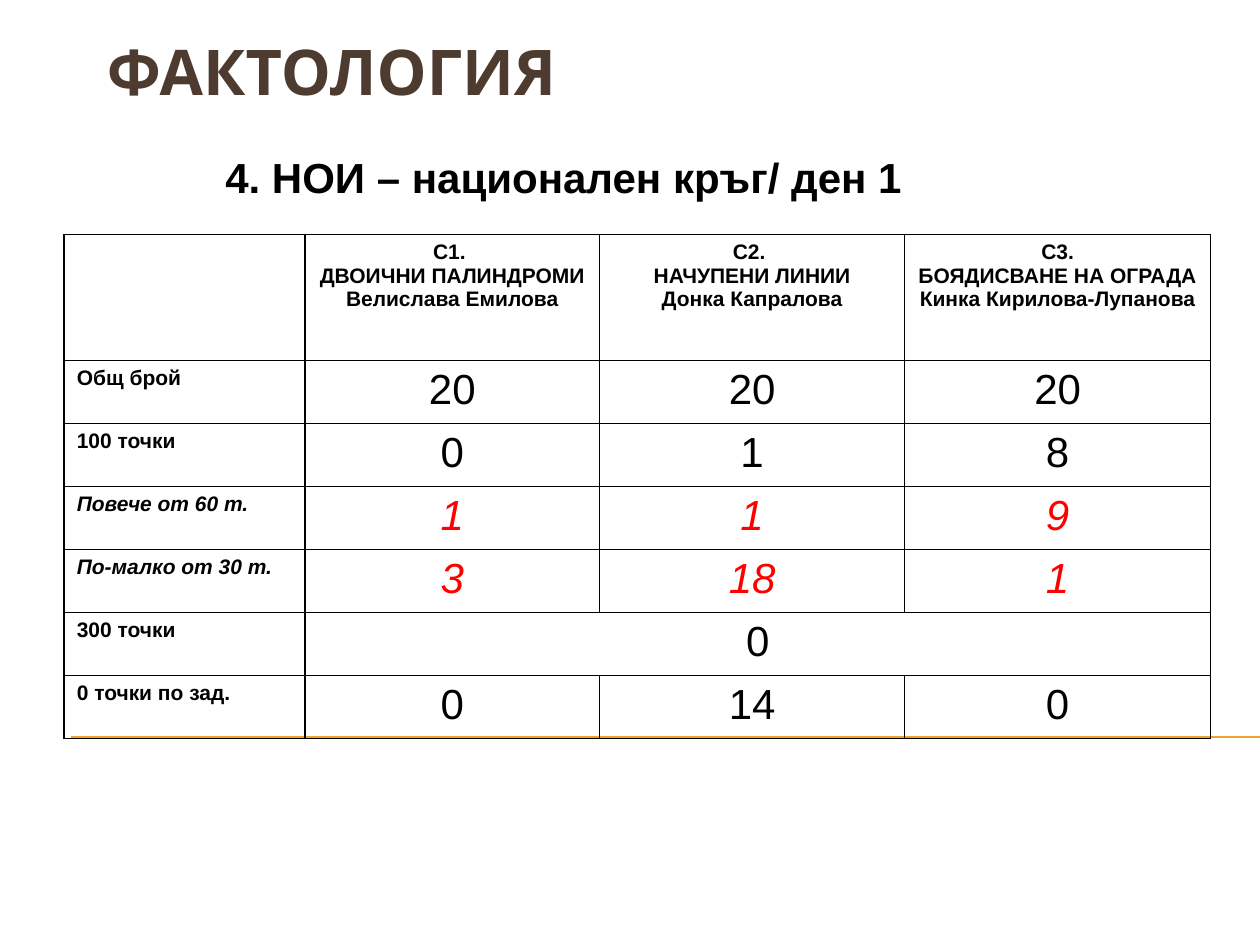
"""Builds the slide with the results of the first day of the national round."""
from lxml import etree
from pptx import Presentation
from pptx.dml.color import RGBColor
from pptx.enum.shapes import MSO_CONNECTOR
from pptx.enum.text import MSO_ANCHOR, MSO_AUTO_SIZE, PP_ALIGN
from pptx.oxml import parse_xml
from pptx.oxml.ns import nsdecls, qn
from pptx.util import Inches, Pt

STRAIGHT = MSO_CONNECTOR.STRAIGHT
TOP, MIDDLE = MSO_ANCHOR.TOP, MSO_ANCHOR.MIDDLE
FIT_SHAPE = MSO_AUTO_SIZE.SHAPE_TO_FIT_TEXT
LEFT, CENTER = PP_ALIGN.LEFT, PP_ALIGN.CENTER

COLORS = {
    "title": "4E3B30",
    "text": "000000",
    "highlight": "FF0000",
    "rule": "F0A22E",
    "border": "000000",
}
COLUMN_WIDTHS = [1.91, 2.34, 2.42, 2.43]
HEADER_HEIGHT = 1
ROW_HEIGHT = 0.5
HEADERS = [
    ["С1. ", "ДВОИЧНИ ПАЛИНДРОМИ", "Велислава Емилова"],
    ["С2. ", "НАЧУПЕНИ ЛИНИИ", "Донка Капралова"],
    ["С3.", "БОЯДИСВАНЕ НА ОГРАДА", "Кинка Кирилова-Лупанова"],
]
RESULTS = [
    ("Общ брой", ["20", "20", "20"], False),
    ("100 точки", ["0", "1", "8"], False),
    ("Повече от 60 т.", ["1", "1", "9"], True),
    ("По-малко от 30 т.", ["3", "18", "1"], True),
    ("300 точки", ["0"], False),
    ("0 точки по зад.", ["0", "14", "0"], False),
]


def write_text(frame, lines, size=12, font="Arial", color="text",
               bold=False, italic=False, align=LEFT):
    """Write each line as one formatted paragraph of the text frame."""
    for index, line in enumerate(lines):
        para = frame.paragraphs[0] if index == 0 else frame.add_paragraph()
        para.alignment = align
        span = para.add_run()
        span.text = line
        span.font.name = font
        span.font.size = Pt(size)
        span.font.bold = bold
        span.font.italic = italic
        span.font.color.rgb = RGBColor.from_string(COLORS[color])


def add_rule(page, left, right, top):
    """Draw the thin horizontal rule without a shadow."""
    rule = page.shapes.add_connector(
        STRAIGHT, Inches(left), Inches(top), Inches(right), Inches(top))
    rule.line.color.rgb = RGBColor.from_string(COLORS["rule"])
    rule.line.width = Pt(0.75)
    etree.SubElement(rule._element.spPr, qn("a:effectLst"))


def add_text(page, left, top, width, height, text, anchor=TOP, wrap=True,
             grow=False, **style):
    """Add a text box with one line of formatted text."""
    box = page.shapes.add_textbox(
        Inches(left), Inches(top), Inches(width), Inches(height))
    frame = box.text_frame
    frame.word_wrap = wrap
    frame.vertical_anchor = anchor
    if grow:
        frame.auto_size = FIT_SHAPE
    write_text(frame, [text], **style)


def format_cell(cell):
    """Give a cell thin borders on all sides and no fill."""
    properties = cell._tc.get_or_add_tcPr()
    for side in ("lnL", "lnR", "lnT", "lnB"):
        properties.append(parse_xml(
            f'<a:{side} {nsdecls("a")} w="{Pt(1)}"><a:solidFill>'
            f'<a:srgbClr val="{COLORS["border"]}"/></a:solidFill></a:{side}>'))
    cell.fill.background()


def add_results_table(page, left, top):
    """Add the table with tasks in columns and score groups in rows."""
    height = HEADER_HEIGHT + ROW_HEIGHT * len(RESULTS)
    table = page.shapes.add_table(
        len(RESULTS) + 1, len(COLUMN_WIDTHS), Inches(left), Inches(top),
        Inches(sum(COLUMN_WIDTHS)), Inches(height)).table
    table.first_row = False
    table.horz_banding = False
    for column, width in zip(table.columns, COLUMN_WIDTHS):
        column.width = Inches(width)
    for index, row in enumerate(table.rows):
        row.height = Inches(ROW_HEIGHT if index else HEADER_HEIGHT)
    for cell in table.iter_cells():
        format_cell(cell)
    for column, lines in enumerate(HEADERS, 1):
        write_text(table.cell(0, column).text_frame, lines,
                   bold=True, align=CENTER)
    for row, (label, values, marked) in enumerate(RESULTS, 1):
        write_text(table.cell(row, 0).text_frame, [label],
                   bold=True, italic=marked)
        if len(values) == 1:
            table.cell(row, 1).merge(table.cell(row, len(HEADERS)))
        for column, value in enumerate(values, 1):
            write_text(table.cell(row, column).text_frame, [value], size=24,
                       color="highlight" if marked else "text",
                       italic=marked, align=CENTER)


def main():
    """Build the slide and save the deck."""
    deck = Presentation()
    deck.slide_width, deck.slide_height = Inches(10), Inches(7.5)
    page = deck.slides.add_slide(deck.slide_layouts[6])
    add_rule(page, 0.56, 10, 5.85)
    add_text(page, 0.75, 0.21, 8.66, 1.02, "ФАКТОЛОГИЯ",
             size=36, font="Karla", color="title", bold=True)
    add_text(page, 1.69, 1.15, 5.71, 0.51, "4. НОИ – национален кръг/ ден 1",
             anchor=MIDDLE, wrap=False, grow=True, size=24, bold=True)
    add_results_table(page, 0.51, 1.86)
    deck.save("out.pptx")


if __name__ == "__main__":
    main()
